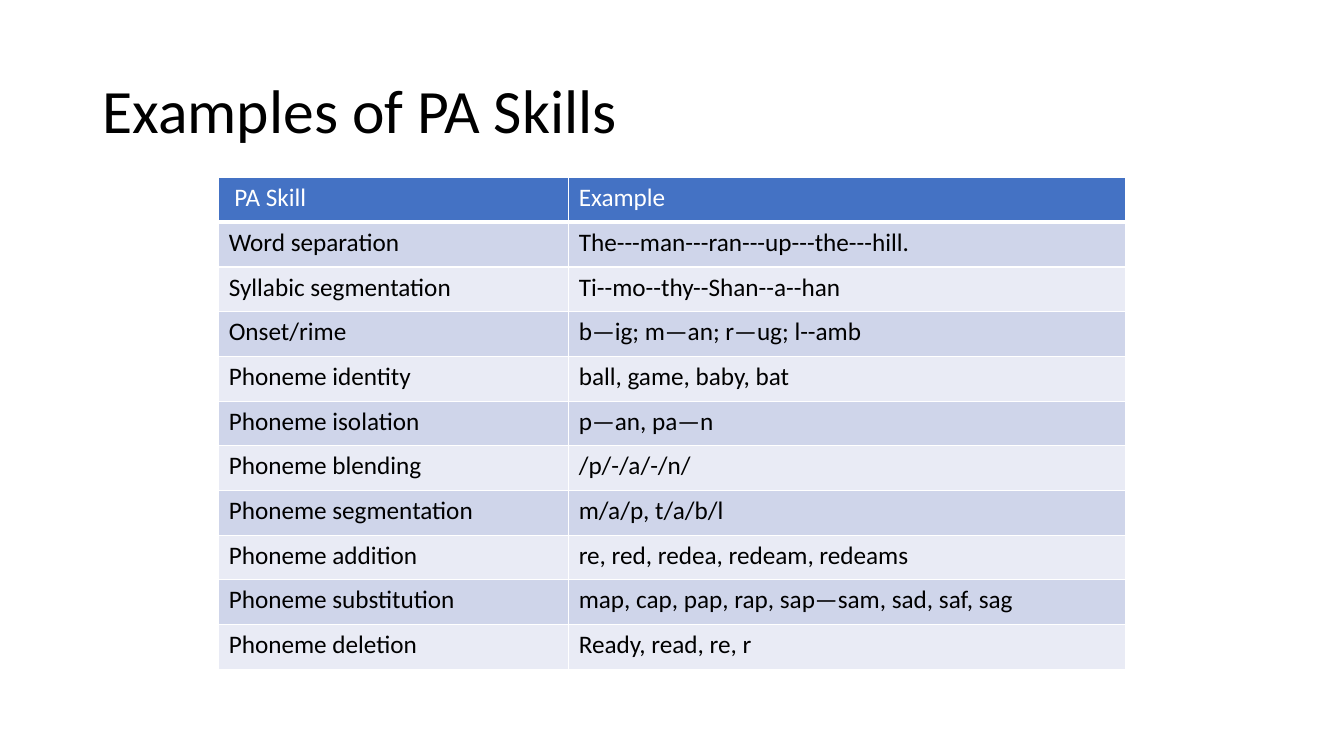
"""Build a slide with a table of phonological awareness skills and examples."""
import pptx
import pptx.dml.color
import pptx.enum.text
import pptx.oxml
import pptx.oxml.ns
import pptx.util

Pt = pptx.util.Pt
RGBColor = pptx.dml.color.RGBColor
BLACK = RGBColor(0x00, 0x00, 0x00)
WHITE = RGBColor(0xFF, 0xFF, 0xFF)
HEADER_BLUE = RGBColor(0x44, 0x72, 0xC4)
BAND_DARK = RGBColor(0xCF, 0xD5, 0xEA)
BAND_LIGHT = RGBColor(0xE9, 0xEB, 0xF5)

SKILLS = [
    (" PA Skill", "Example"),
    ("Word separation", "The---man---ran---up---the---hill."),
    ("Syllabic segmentation", "Ti--mo--thy--Shan--a--han"),
    ("Onset/rime", "b—ig; m—an; r—ug; l--amb"),
    ("Phoneme identity", "ball, game, baby, bat"),
    ("Phoneme isolation", "p—an, pa—n"),
    ("Phoneme blending", "/p/-/a/-/n/"),
    ("Phoneme segmentation", "m/a/p, t/a/b/l"),
    ("Phoneme addition", "re, red, redea, redeam, redeams"),
    ("Phoneme substitution", "map, cap, pap, rap, sap—sam, sad, saf, sag"),
    ("Phoneme deletion", "Ready, read, re, r"),
]
COLUMN_WIDTHS = (250, 398)
ROW_HEIGHT = 31.94


def write_text(frame, text, size=18, color=BLACK, line_spacing=None):
    para = frame.paragraphs[0]
    para.line_spacing = line_spacing
    span = para.add_run()
    span.text = text
    span.font.name = "Calibri"
    span.font.size = Pt(size)
    span.font.bold = False
    span.font.color.rgb = color


def add_border(cell, side, width):
    line = pptx.oxml.parse_xml(
        f'<a:ln{side} {pptx.oxml.ns.nsdecls("a")} w="{Pt(width)}">'
        f'<a:solidFill><a:srgbClr val="{WHITE}"/></a:solidFill></a:ln{side}>'
    )
    cell._tc.get_or_add_tcPr().append(line)


deck = pptx.Presentation()
deck.slide_width = Pt(960)
deck.slide_height = Pt(540)
page = deck.slides.add_slide(deck.slide_layouts[6])

title_box = page.shapes.add_textbox(Pt(66.24), Pt(28.8), Pt(828), Pt(104.4))
title_box.text_frame.word_wrap = True
title_box.text_frame.vertical_anchor = pptx.enum.text.MSO_ANCHOR.MIDDLE
write_text(title_box.text_frame, "Examples of PA Skills", size=44, line_spacing=0.9)

table = page.shapes.add_table(
    len(SKILLS), len(COLUMN_WIDTHS), Pt(156.24), Pt(126.9),
    Pt(sum(COLUMN_WIDTHS)), Pt(ROW_HEIGHT * len(SKILLS)),
).table
for column, width in zip(table.columns, COLUMN_WIDTHS):
    column.width = Pt(width)

for row_index, texts in enumerate(SKILLS):
    table.rows[row_index].height = Pt(ROW_HEIGHT)
    is_header = row_index == 0
    band = BAND_DARK if row_index % 2 else BAND_LIGHT
    for column_index, text in enumerate(texts):
        cell = table.cell(row_index, column_index)
        for side in "LRTB":
            add_border(cell, side, 3 if is_header and side == "B" else 1)
        cell.fill.solid()
        cell.fill.fore_color.rgb = HEADER_BLUE if is_header else band
        write_text(cell.text_frame, text, color=WHITE if is_header else BLACK)

deck.save("out.pptx")
